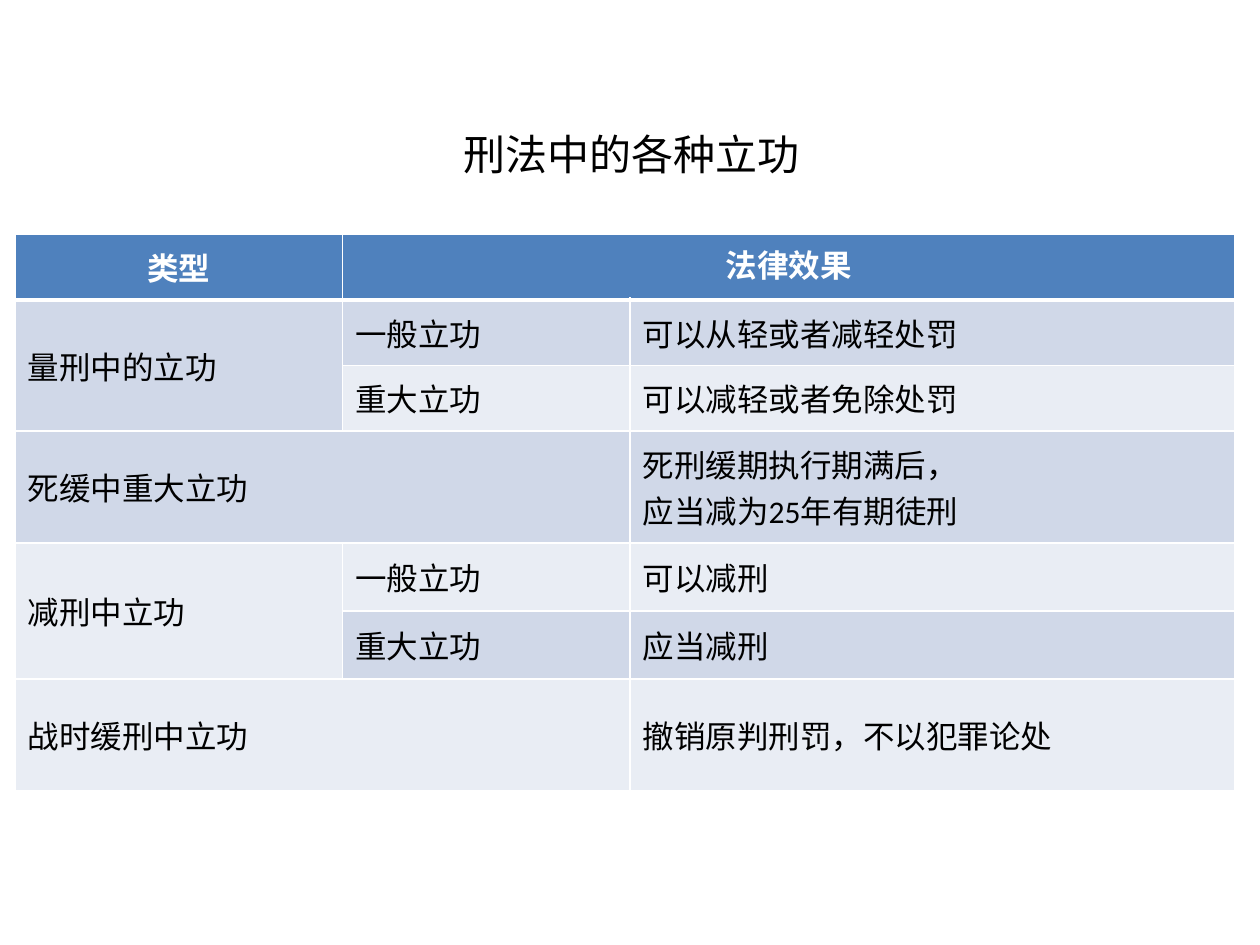
"""Build a slide with a table of the kinds of meritorious service in criminal law."""
from lxml import etree
from pptx import Presentation
from pptx import util as u
from pptx.dml.color import RGBColor
from pptx.enum import text
from pptx.oxml.ns import qn

TITLE = "刑法中的各种立功"
ROWS = [
    ("类型", "法律效果", ""),
    ("量刑中的立功", "一般立功", "可以从轻或者减轻处罚"),
    ("", "重大立功", "可以减轻或者免除处罚"),
    ("死缓中重大立功", "", "死刑缓期执行期满后，\n应当减为25年有期徒刑"),
    ("减刑中立功", "一般立功", "可以减刑"),
    ("", "重大立功", "应当减刑"),
    ("战时缓刑中立功", "", "撤销原判刑罚，不以犯罪论处"),
]
MERGES = [((0, 1), (0, 2)), ((1, 0), (2, 0)), ((3, 0), (3, 1)),
          ((4, 0), (5, 0)), ((6, 0), (6, 1))]
WIDTHS = [2.6, 2.28, 4.8]
HEIGHTS = [0.52, 0.52, 0.52, 0.89, 0.54, 0.54, 0.89]
COLORS = {"header": "4F81BD", "odd": "D0D8E8", "even": "E9EDF4",
          "light": "FFFFFF", "dark": "000000"}
CJK_FONT = "Noto Sans CJK SC"


def write(frame, words, *, size=18, font="Calibri", color="dark", bold=False,
          align=text.PP_ALIGN.LEFT):
    """Fill a text frame with formatted text, one paragraph per line."""
    frame.text = words
    for para in frame.paragraphs:
        para.alignment = align
        for span in para.runs:
            span.font.size = u.Pt(size)
            span.font.name = font
            span.font.bold = bold
            span.font.color.rgb = RGBColor.from_string(COLORS[color])
            etree.SubElement(span.font._element, qn("a:ea"), typeface=CJK_FONT)


def draw_borders(cell, row):
    """Give a cell white edges, with a heavy line under the header."""
    heavy = {0: "B", 1: "T"}.get(row)
    for side in "LRTB":
        width = u.Pt(3 if side == heavy else 1)
        line = etree.SubElement(cell._tc.get_or_add_tcPr(), qn(f"a:ln{side}"), w=str(width))
        fill = etree.SubElement(line, qn("a:solidFill"))
        etree.SubElement(fill, qn("a:srgbClr"), val=COLORS["light"])


def add_title(page):
    """Place the title in its placeholder."""
    box = page.shapes.title
    box.left, box.top, box.width, box.height = map(u.Inches, (3.58, 0.97, 5, 0.51))
    write(box.text_frame, TITLE, size=24, font=CJK_FONT)
    box.text_frame.vertical_anchor = text.MSO_ANCHOR.TOP
    box.text_frame.auto_size = text.MSO_AUTO_SIZE.SHAPE_TO_FIT_TEXT


def add_effects_table(page):
    """Add the table of kinds and legal effects."""
    table = page.shapes.add_table(
        len(ROWS), len(WIDTHS), u.Inches(0.12), u.Inches(1.86),
        u.Inches(sum(WIDTHS)), u.Inches(sum(HEIGHTS))).table
    for column, width in zip(table.columns, WIDTHS):
        column.width = u.Inches(width)
    for line, height in zip(table.rows, HEIGHTS):
        line.height = u.Inches(height)
    for row, words in enumerate(ROWS):
        band = "header" if row == 0 else "odd" if row % 2 else "even"
        style = {"color": "light", "bold": True,
                 "align": text.PP_ALIGN.CENTER} if row == 0 else {}
        for column, label in enumerate(words):
            cell = table.cell(row, column)
            draw_borders(cell, row)
            cell.fill.solid()
            cell.fill.fore_color.rgb = RGBColor.from_string(COLORS[band])
            cell.vertical_anchor = text.MSO_ANCHOR.MIDDLE
            write(cell.text_frame, label, **style)
    table.cell(0, 1).vertical_anchor = text.MSO_ANCHOR.TOP
    for first, last in MERGES:
        table.cell(*first).merge(table.cell(*last))


def main():
    """Build and save the deck."""
    deck = Presentation()
    deck.slide_width, deck.slide_height = u.Inches(10), u.Inches(7.5)
    page = deck.slides.add_slide(deck.slide_layouts[5])
    add_effects_table(page)
    add_title(page)
    deck.save("out.pptx")


if __name__ == "__main__":
    main()
